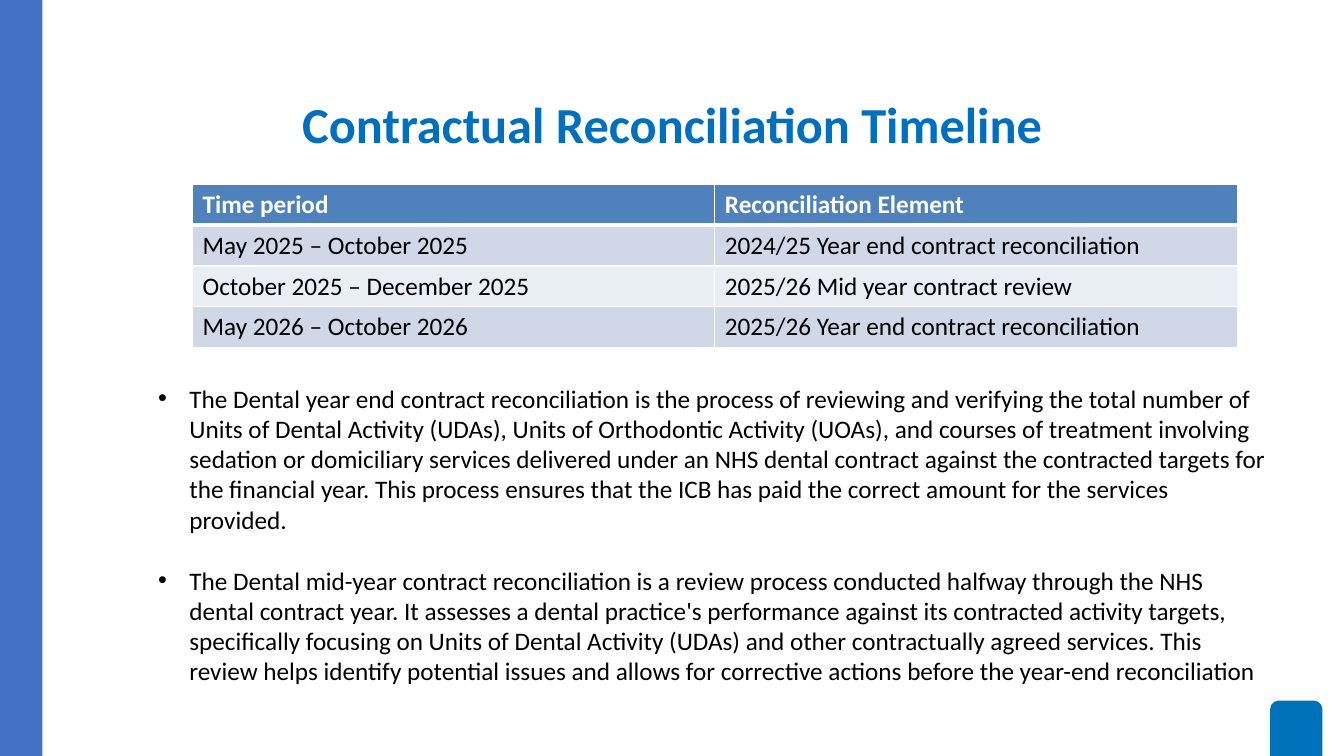
"""Build the contractual reconciliation timeline slide."""
from lxml import etree
from pptx import Presentation
from pptx import util as u
from pptx.dml.color import RGBColor
from pptx.enum import shapes, text
from pptx.oxml import ns

BLUE = RGBColor(0x00, 0x6F, 0xC0)
TAB_BLUE = RGBColor(0x00, 0x71, 0xBB)
BAR_BLUE = RGBColor(0x44, 0x71, 0xC4)
HEADER = RGBColor(0x4F, 0x81, 0xBD)
BANDS = [RGBColor(0xE9, 0xED, 0xF4), RGBColor(0xD0, 0xD8, 0xE8)]
WHITE = RGBColor(0xFF, 0xFF, 0xFF)
BLACK = RGBColor(0x00, 0x00, 0x00)

deck = Presentation()
deck.slide_width, deck.slide_height = u.Inches(13.33), u.Inches(7.5)
page = deck.slides.add_slide(deck.slide_layouts[6])


def area(left, top, width, height):
    """Turn percentages of the slide into lengths."""
    across, down = deck.slide_width / 100, deck.slide_height / 100
    return [u.Emu(round(n)) for n in (left * across, top * down, width * across, height * down)]


def write(para, words, size=18, color=BLACK, bold=False, align=None, before=0, bullet=False):
    """Put formatted words in a paragraph."""
    if bullet:
        props = para._p.get_or_add_pPr()
        props.set("marL", str(u.Inches(0.31)))
        props.set("indent", str(-u.Inches(0.31)))
        etree.SubElement(props, ns.qn("a:buFont"), typeface="Arial")
        etree.SubElement(props, ns.qn("a:buChar"), char="•")
    para.alignment = align
    para.space_before = u.Pt(before)
    span = para.add_run()
    span.text = words
    span.font.name, span.font.size, span.font.bold = "Calibri", u.Pt(size), bold
    span.font.color.rgb = color


tab = page.shapes.add_shape(
    shapes.MSO_SHAPE.ROUND_2_SAME_RECTANGLE, *area(94.5, 92.67, 3.9, 7.33))
bar = page.shapes.add_shape(shapes.MSO_SHAPE.RECTANGLE, *area(0, 0, 3.15, 100))
for shape, color in ((tab, TAB_BLUE), (bar, BAR_BLUE)):
    shape.shadow.inherit = False
    shape.fill.solid()
    shape.fill.fore_color.rgb = color
    shape.line.fill.background()

title = page.shapes.add_textbox(*area(21.68, 12.27, 56.71, 8.13)).text_frame
title.word_wrap = True
title.margin_left = title.margin_right = title.margin_top = title.margin_bottom = 0
write(title.paragraphs[0], "Contractual Reconciliation Timeline",
      size=36, color=BLUE, bold=True, align=text.PP_ALIGN.CENTER)

rows = [
    ("Time period", "Reconciliation Element"),
    ("May 2025 – October 2025", "2024/25 Year end contract reconciliation"),
    ("October 2025 – December 2025", "2025/26 Mid year contract review"),
    ("May 2026 – October 2026", "2025/26 Year end contract reconciliation"),
]
table = page.shapes.add_table(len(rows), 2, *area(14.33, 24.4, 77.72, 21.6)).table
for r, row in enumerate(rows):
    for c, words in enumerate(row):
        cell = table.cell(r, c)
        write(cell.text_frame.paragraphs[0], words,
              color=BLACK if r else WHITE, bold=r == 0)
        for side in "LRTB":
            thick = (r, side) in ((0, "B"), (1, "T"))
            edge = etree.SubElement(cell._tc.get_or_add_tcPr(), ns.qn("a:ln" + side),
                                    w=str(u.Pt(3 if thick else 1)))
            paint = etree.SubElement(edge, ns.qn("a:solidFill"))
            etree.SubElement(paint, ns.qn("a:srgbClr"), val=str(WHITE))
        cell.fill.solid()
        cell.fill.fore_color.rgb = BANDS[r % 2] if r else HEADER

points = [
    "The Dental year end contract reconciliation is the process of reviewing and verifying "
    "the total number of Units of Dental Activity (UDAs), Units of Orthodontic Activity (UOAs), "
    "and courses of treatment involving sedation or domiciliary services delivered under an NHS "
    "dental contract against the contracted targets for the financial year. This process ensures "
    "that the ICB has paid the correct amount for the services provided.",
    "The Dental mid-year contract reconciliation is a review process conducted halfway through "
    "the NHS dental contract year. It assesses a dental practice's performance against its "
    "contracted activity targets, specifically focusing on Units of Dental Activity (UDAs) and "
    "other contractually agreed services. This review helps identify potential issues and allows "
    "for corrective actions before the year-end reconciliation",
]
body = page.shapes.add_textbox(*area(11.03, 50, 84.25, 45.73)).text_frame
body.word_wrap = True
for i, words in enumerate(points):
    para = body.add_paragraph() if i else body.paragraphs[0]
    write(para, words, before=22 * i, bullet=True)

deck.save("out.pptx")
